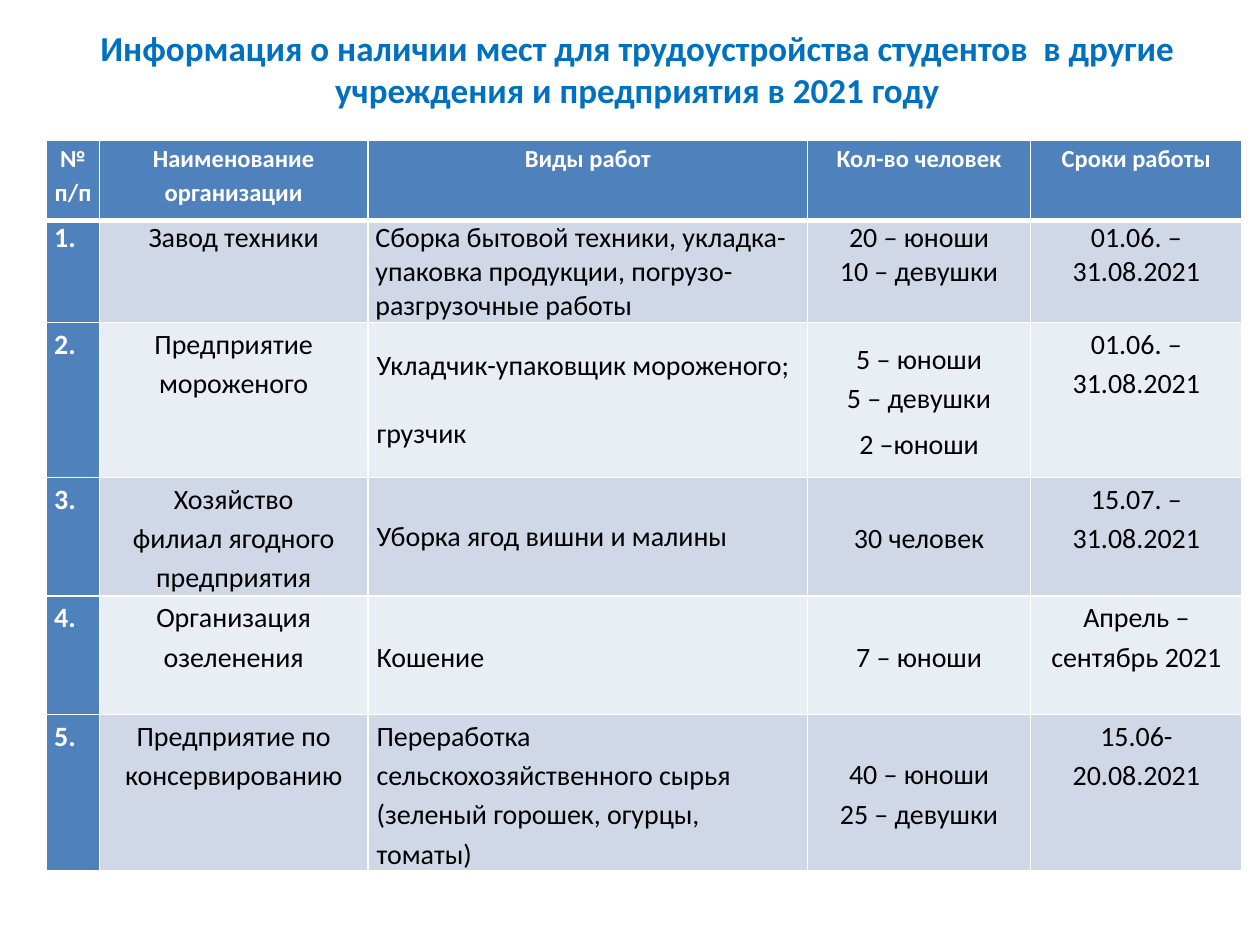
from lxml.etree import SubElement
from pptx import Presentation
from pptx.dml.color import RGBColor
from pptx.enum.text import MSO_ANCHOR as Anchor, PP_ALIGN as Align
from pptx.oxml.ns import qn
from pptx.util import Inches, Pt

COLORS = {
    "title": "0070C0",
    "accent": "4F81BD",
    "odd": "D0D8E8",
    "even": "E9EDF4",
    "white": "FFFFFF",
    "text": "000000",
}
FONT = "Calibri"
TITLE = ("Информация о наличии мест для трудоустройства студентов  "
         "в другие учреждения и предприятия в 2021 году")
HEADERS = ["№ п/п", "Наименование организации", "Виды работ",
           "Кол-во человек", "Сроки работы"]
# Organisation, kinds of work, number of people, dates; "\n" starts a paragraph
JOBS = [
    ("Завод техники",
     "Сборка бытовой техники, укладка-упаковка продукции, погрузо-разгрузочные работы",
     "20 – юноши\n10 – девушки", "01.06. – 31.08.2021"),
    ("Предприятие мороженого", "Укладчик-упаковщик мороженого;\nгрузчик",
     "5 – юноши\n5 – девушки\n2 –юноши", "01.06. – 31.08.2021"),
    ("Хозяйство\nфилиал ягодного предприятия", "Уборка ягод вишни и малины",
     "30 человек", "15.07. – 31.08.2021"),
    ("Организация озеленения", "Кошение", "7 – юноши",
     "Апрель – сентябрь 2021"),
    ("Предприятие по консервированию",
     "Переработка сельскохозяйственного сырья (зеленый горошек, огурцы, томаты)",
     "40 – юноши\n25 – девушки", "15.06-20.08.2021"),
]
COLUMN_WIDTHS = [0.42, 2.13, 3.49, 1.77, 1.68]
ROW_HEIGHTS = [0.64, 0.81, 1.23, 0.94, 0.94, 1.24]
NUMBER, WORK, PEOPLE = 0, 2, 3
# Space in points before the last paragraph of a cell, by (row, column)
LAST_GAPS = {(2, WORK): 19.5, (2, PEOPLE): 4}


def rgb(name):
    return RGBColor.from_string(COLORS[name])


def write_text(frame, text, size, color, bold, **paragraph_format):
    frame.word_wrap = True
    frame.text = text
    for paragraph in frame.paragraphs:
        for name, value in paragraph_format.items():
            setattr(paragraph, name, value)
        font = paragraph.runs[0].font
        for name, value in {"name": FONT, "size": Pt(size), "bold": bold}.items():
            setattr(font, name, value)
        font.color.rgb = rgb(color)


def add_title(slide):
    box = slide.shapes.add_textbox(Inches(0.56), Inches(0.25), Inches(9), Inches(0.58))
    write_text(box.text_frame, TITLE, 20, "title", True, alignment=Align.CENTER)
    box.text_frame.vertical_anchor = Anchor.MIDDLE


def set_borders(cell, widths):
    """Draw white borders with the given widths in points: left, right, top, bottom."""
    properties = cell._tc.get_or_add_tcPr()
    for index, (side, width) in enumerate(zip("LRTB", widths)):
        line = SubElement(properties, qn(f"a:ln{side}"), w=str(Pt(width)))
        fill = SubElement(line, qn("a:solidFill"))
        SubElement(fill, qn("a:srgbClr"), val=COLORS["white"])
        properties.insert(index, line)


def format_cell(cell, row, column, text):
    header, number = row == 0, column == NUMBER
    centered = header or column not in (NUMBER, WORK)
    single_spaced = row == 1 or (column == WORK and row in (2, 3))
    middle = row > 1 and column in (WORK, PEOPLE)
    side_inset = Inches(0.07 if row > 1 and column in (1, WORK, PEOPLE) else 0.06)

    accented = header or number
    write_text(cell.text_frame, text, 14 if header else 16,
               "white" if accented else "text", accented,
               alignment=Align.CENTER if centered else Align.LEFT,
               line_spacing=1.0 if single_spaced else 1.15)
    if (row, column) in LAST_GAPS:
        cell.text_frame.paragraphs[-1].space_before = Pt(LAST_GAPS[row, column])

    layout = {
        "margin_left": side_inset, "margin_right": side_inset,
        "margin_top": 0, "margin_bottom": 0,
        "vertical_anchor": Anchor.MIDDLE if middle else Anchor.TOP,
    }
    for name, value in layout.items():
        setattr(cell, name, value)
    cell.fill.solid()
    band = "odd" if row % 2 else "even"
    cell.fill.fore_color.rgb = rgb("accent" if accented else band)
    set_borders(cell, (1, 1, 3 if row == 1 else 1, 3 if header else 1))


def add_jobs_table(slide):
    rows = [HEADERS] + [(f"{n}.", *job) for n, job in enumerate(JOBS, 1)]
    table = slide.shapes.add_table(
        len(rows), len(HEADERS), Inches(0.37), Inches(1.11),
        Inches(sum(COLUMN_WIDTHS)), Inches(sum(ROW_HEIGHTS))).table
    for column, width in zip(table.columns, COLUMN_WIDTHS):
        column.width = Inches(width)
    for row, height in zip(table.rows, ROW_HEIGHTS):
        row.height = Inches(height)
    for row, texts in enumerate(rows):
        for column, text in enumerate(texts):
            format_cell(table.cell(row, column), row, column, text)


def main():
    prs = Presentation()
    prs.slide_width, prs.slide_height = Inches(10), Inches(7.5)
    slide = prs.slides.add_slide(prs.slide_layouts[6])
    add_title(slide)
    add_jobs_table(slide)
    prs.save("out.pptx")


if __name__ == "__main__":
    main()
